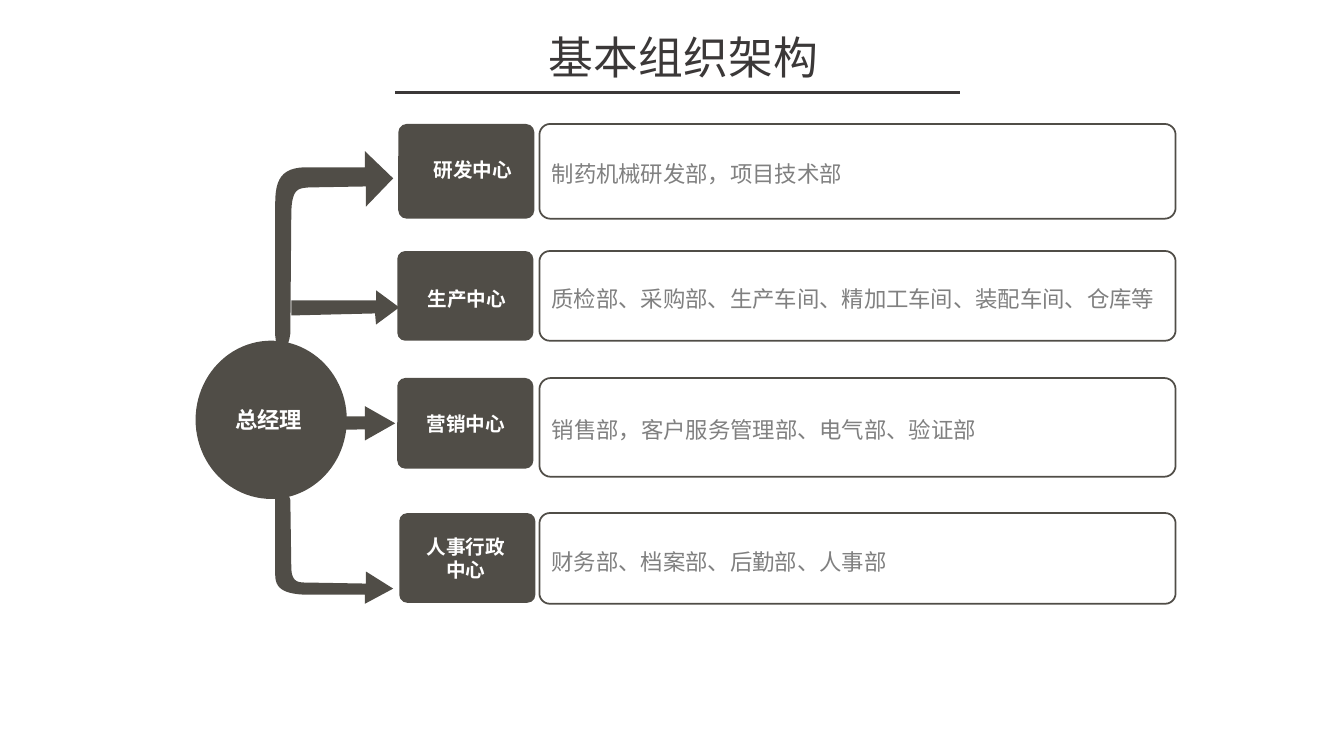
from pptx import Presentation
from pptx.util import Inches, Pt
from pptx.dml.color import RGBColor
from pptx.enum import shapes, text
from pptx.oxml.ns import qn
from lxml import etree

DARK = RGBColor(0x50, 0x4D, 0x47)
TITLE = RGBColor(0x3B, 0x38, 0x38)
GREY = RGBColor(0x80, 0x80, 0x80)
WHITE = RGBColor(0xFF, 0xFF, 0xFF)
FONT = "Noto Sans CJK SC"
CURVE_STEPS = 12

prs = Presentation()
prs.slide_width, prs.slide_height = Inches(13.33), Inches(7.5)
s = prs.slides.add_slide(prs.slide_layouts[6])


def add_shape(kind, box, fill=None, radius=None):
    sp = s.shapes.add_shape(kind, *map(Inches, box))
    sp.shadow.inherit = False
    if radius:
        sp.adjustments[0] = radius
    if fill is None:
        sp.fill.background()
        sp.line.color.rgb = DARK
        sp.line.width = Pt(1.25)
    else:
        sp.fill.solid()
        sp.fill.fore_color.rgb = fill
        sp.line.fill.background()
    return sp


def write(sp, words, size, color, bold=False, align=text.PP_ALIGN.CENTER, spacing=1.0):
    tf = sp.text_frame
    tf.word_wrap = True
    tf.vertical_anchor = text.MSO_ANCHOR.MIDDLE
    tf.margin_left = tf.margin_right = Inches(0.09)
    tf.margin_top = tf.margin_bottom = Inches(0.04)
    p = tf.paragraphs[0]
    p.text = words
    p.alignment = align
    p.line_spacing = spacing
    r = p.runs[0]
    r.font.size, r.font.bold, r.font.name = Pt(size), bold, FONT
    r.font.color.rgb = color
    ea = etree.SubElement(r.font._element, qn("a:ea"))
    ea.set("typeface", FONT)


# Arrows: two numbers are a corner, six are a Bezier curve
arrows = [
    # down to administration
    [(2.88, 4.96), (2.89, 5.65), (2.9, 5.78, 2.96, 5.78, 3.06, 5.78), (3.63, 5.79),
     (3.63, 5.67), (3.9, 5.84), (3.62, 5.99), (3.62, 5.9), (3.02, 5.9),
     (2.8, 5.89, 2.73, 5.83, 2.73, 5.7), (2.73, 4.95),
     (2.75, 4.83, 2.85, 4.84, 2.88, 4.96)],
    # across to marketing
    [(2.51, 4.28), (3.62, 4.26), (3.62, 4.37), (3.92, 4.2), (3.62, 4.03),
     (3.62, 4.13), (2.51, 4.13)],
    # up to research
    [(2.88, 3.31), (2.89, 2.09), (2.9, 1.87, 2.96, 1.87, 3.06, 1.86), (3.63, 1.85),
     (3.63, 2.05), (3.9, 1.77), (3.62, 1.5), (3.62, 1.66), (3.02, 1.66),
     (2.8, 1.67, 2.73, 1.77, 2.73, 2.02), (2.73, 3.33),
     (2.75, 3.55, 2.85, 3.53, 2.88, 3.31)],
    # across to production
    [(2.89, 3.13), (3.72, 3.11), (3.73, 3.22), (3.96, 3.05), (3.73, 2.88),
     (3.73, 2.98), (2.89, 2.98)],
]
for outline in arrows:
    points = [outline[0]]
    for step in outline[1:]:
        if len(step) == 2:
            points.append(step)
            continue
        x0, y0 = points[-1]
        x1, y1, x2, y2, x3, y3 = step
        for i in range(1, CURVE_STEPS + 1):
            t = i / CURVE_STEPS
            a, b, c, d = (1 - t) ** 3, 3 * t * (1 - t) ** 2, 3 * t * t * (1 - t), t ** 3
            points.append((a * x0 + b * x1 + c * x2 + d * x3,
                           a * y0 + b * y1 + c * y2 + d * y3))
    points = [(Inches(x), Inches(y)) for x, y in points]
    builder = s.shapes.build_freeform(*points[0])
    builder.add_line_segments(points[1:], close=True)
    arrow = builder.convert_to_shape()
    arrow.shadow.inherit = False
    arrow.fill.solid()
    arrow.fill.fore_color.rgb = DARK
    arrow.line.fill.background()

# General manager
add_shape(shapes.MSO_SHAPE.OVAL, (1.94, 3.38, 1.5, 1.57), DARK)
manager = s.shapes.add_textbox(*map(Inches, (2.04, 3.98, 1.25, 0.37)))
write(manager, "总经理", 16, WHITE, True)

# Centres: left, top, heights of both boxes, name, label box, departments
centres = [
    (3.95, 1.23, 0.94, 0.94, "研发中心", (4.2, 1.42, 0.98, 0.52),
     "制药机械研发部，项目技术部"),
    (3.94, 2.49, 0.89, 0.89, "生产中心", (4.08, 2.76, 1.1, 0.41),
     "质检部、采购部、生产车间、精加工车间、装配车间、仓库等"),
    (3.94, 3.75, 0.9, 0.98, "营销中心", (4.06, 4.03, 1.12, 0.35),
     "销售部，客户服务管理部、电气部、验证部"),
    (3.96, 5.09, 0.89, 0.9, "人事行政中心", (4.06, 5.31, 1.12, 0.46),
     "财务部、档案部、后勤部、人事部"),
]
ROUND = shapes.MSO_SHAPE.ROUNDED_RECTANGLE
for left, top, height, detail_height, name, label_box, departments in centres:
    add_shape(ROUND, (left, top, 1.35, height), DARK, 0.09)
    label = s.shapes.add_textbox(*map(Inches, label_box))
    write(label, name, 14, WHITE, True)
    detail = add_shape(ROUND, (5.35, top, 6.31, detail_height), radius=0.115)
    write(detail, departments, 16, GREY, align=text.PP_ALIGN.LEFT, spacing=1.2)

# Title and rule
title = s.shapes.add_textbox(*map(Inches, (3.75, 0.24, 6.06, 0.64)))
write(title, "基本组织架构", 32, TITLE)
rule = s.shapes.add_connector(shapes.MSO_CONNECTOR.STRAIGHT,
                              *map(Inches, (3.92, 0.92, 9.52, 0.92)))
rule.line.color.rgb = TITLE
rule.line.width = Pt(2)
etree.SubElement(rule._element.spPr, qn("a:effectLst"))

prs.save("out.pptx")
